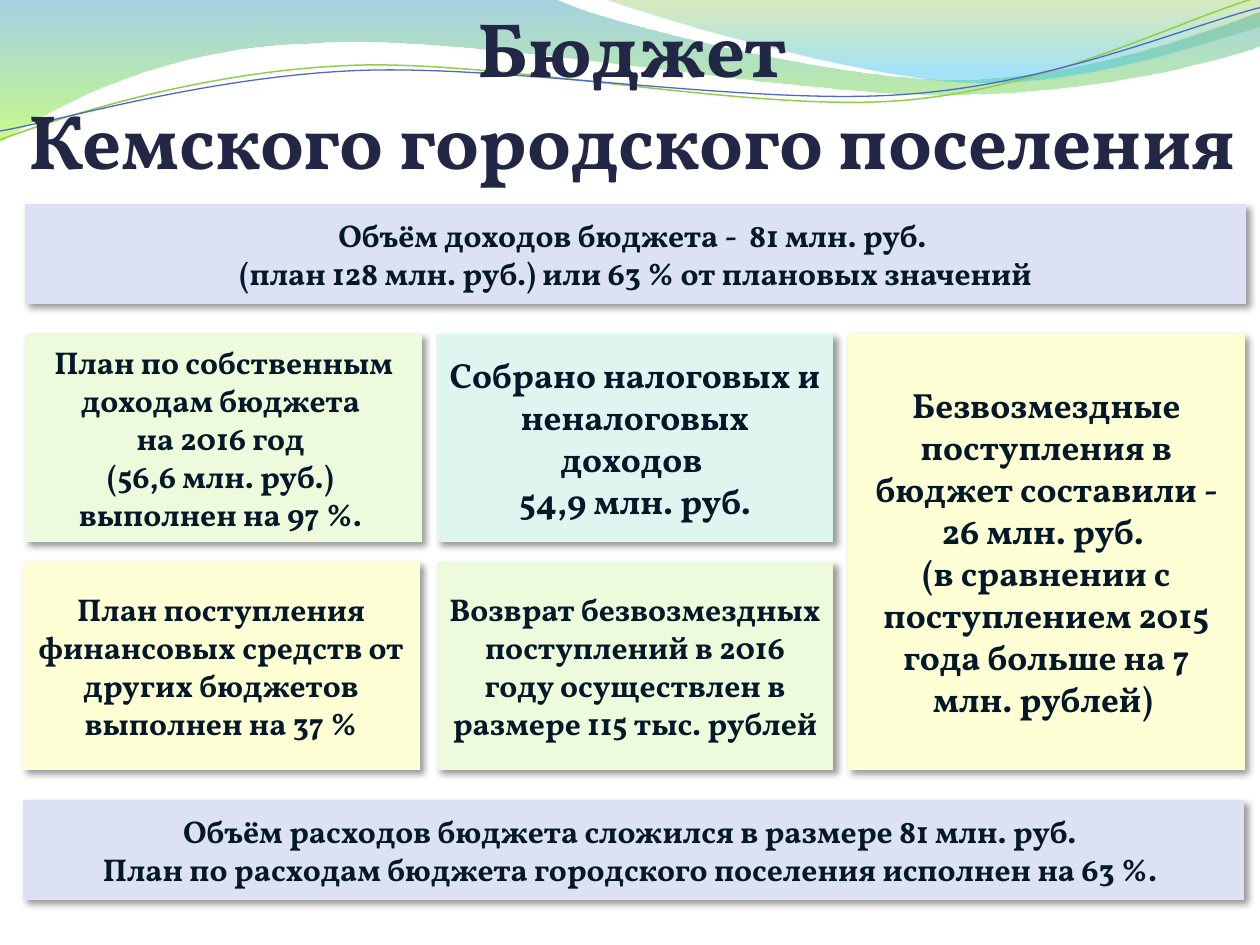
from dataclasses import dataclass
from math import cos, radians, sin

from pptx import Presentation
from pptx.dml.color import RGBColor
from pptx.enum.shapes import MSO_SHAPE
from pptx.enum.text import MSO_ANCHOR, PP_ALIGN
from pptx.oxml.ns import qn
from pptx.oxml.xmlchemy import OxmlElement
from pptx.util import Inches, Pt

PROCESS = MSO_SHAPE.FLOWCHART_PROCESS
MIDDLE, BOTTOM = MSO_ANCHOR.MIDDLE, MSO_ANCHOR.BOTTOM
CENTER = PP_ALIGN.CENTER
FONT = "Vollkorn"
COLORS = {
    "title": "212745", "text": "031828", "shadow": "000000",
    "lavender": "DCE1F4", "green": "EDFBDC", "mint": "DFF5EF", "yellow": "FEFFD5",
    "teal": "3B9CBF", "lime": "9CFA24", "leaf": "7EBE2C", "sky": "39C1F1",
    "green line": "93CE48", "blue line": "4E67C8",
}
LINE_TILT = -2.7
LEFT, LOWER_LEFT = 0.2, 0.18
COLUMN_WIDTH, COLUMN_STEP = 3.15, 3.265
ROW_TOP, ROW_HEIGHT, ROW_STEP = 2.65, 1.65, 1.81
BANNER_WIDTH, BANNER_HEIGHT = 9.69, 0.79
SECOND, THIRD = LEFT + COLUMN_STEP, LEFT + 2 * COLUMN_STEP
SECOND_ROW = ROW_TOP + ROW_STEP


@dataclass
class Stop:
    position: float
    color: str
    opacity: int


@dataclass
class Wave:
    box: tuple
    segments: list
    stops: tuple = ()
    line_color: str = ""
    line_width: float = 0
    tilt: float = 0


@dataclass
class Card:
    left: float
    top: float
    width: float
    height: float
    color: str
    size: int
    lines: list


WAVES = [
    Wave((-0.01, -0.01, 10.02, 1.14), [
        [(0, 0)],
        [(4.4, -0.01)],
        [(4.76, 0.17), (6.64, 0.63), (7.58, 0.63)],
        [(8.53, 0.63), (9.58, 0.26), (10, 0.09)],
        [(10.01, 0.36)],
        [(9.83, 0.44), (8.7, 0.76), (7.46, 0.75)],
        [(6.22, 0.75), (3.82, 0.28), (2.57, 0.34)],
        [(1.29, 0.36), (0.46, 0.83), (-0.01, 1.13)],
        [(0, 0)],
    ], stops=(Stop(0, "teal", 45), Stop(1, "lime", 55))),
    Wave((4.79, -0.01, 5.21, 0.7), [
        [(4.79, -0.01)],
        [(5.09, 0.11), (6.82, 0.62), (7.69, 0.65)],
        [(8.56, 0.69), (9.61, 0.32), (10, 0.21)],
        [(10, 0)],
        [(4.79, -0.01)],
    ], stops=(Stop(0, "leaf", 30), Stop(0.8, "sky", 45))),
    Wave((-0.02, 0.22, 10.02, 0.71), [
        [(0, 1.11)],
        [(0.48, 0.93), (1.58, 0.57), (2.77, 0.52)],
        [(3.95, 0.47), (5.93, 0.89), (7.13, 0.8)],
        [(8.33, 0.71), (9.38, 0.15), (9.98, -0.02)],
    ], line_color="green line", line_width=0.85, tilt=LINE_TILT),
    Wave((-0.02, 0.3, 10.03, 0.58), [
        [(0, 1.04)],
        [(0.47, 0.96), (1.64, 0.61), (2.83, 0.56)],
        [(4.03, 0.51), (5.97, 0.84), (7.17, 0.75)],
        [(8.36, 0.67), (9.41, 0.21), (10, 0.06)],
    ], line_color="blue line", line_width=0.75, tilt=LINE_TILT),
]

CARDS = [
    Card(LEFT, 1.62, BANNER_WIDTH, BANNER_HEIGHT, "lavender", 18, [
        "Объём доходов бюджета -  81 млн. руб. ",
        "(план 128 млн. руб.) или 63 % от плановых значений"]),
    Card(LEFT, ROW_TOP, COLUMN_WIDTH, ROW_HEIGHT, "green", 18, [
        "План по собственным доходам бюджета ", "на 2016 год ",
        "(56,6 млн. руб.) ", "выполнен на 97 %. "]),
    Card(SECOND, ROW_TOP, COLUMN_WIDTH, ROW_HEIGHT, "mint", 20, [
        "Собрано налоговых и неналоговых доходов ", "54,9 млн. руб."]),
    Card(THIRD, ROW_TOP, COLUMN_WIDTH, ROW_STEP + ROW_HEIGHT, "yellow", 20, [
        "Безвозмездные поступления в бюджет составили - 26 млн. руб. ",
        "(в сравнении с поступлением 2015 года больше на 7 млн. рублей) "]),
    Card(LOWER_LEFT, SECOND_ROW, COLUMN_WIDTH, ROW_HEIGHT, "yellow", 18, [
        "План поступления финансовых средств от других бюджетов выполнен на 37 %"]),
    Card(SECOND, SECOND_ROW, COLUMN_WIDTH, ROW_HEIGHT, "green", 18, [
        "Возврат безвозмездных поступлений в 2016 году осуществлен в размере 115 тыс. рублей"]),
    Card(LOWER_LEFT, 6.35, BANNER_WIDTH, BANNER_HEIGHT, "lavender", 18, [
        "Объём расходов бюджета сложился в размере 81 млн. руб. ",
        "План по расходам бюджета городского поселения исполнен на 63 %. "]),
]


def rgb(name: str) -> RGBColor:
    return RGBColor.from_string(COLORS[name])


def add_opacity(color_element, percent: int) -> None:
    alpha = OxmlElement("a:alpha")
    alpha.set("val", str(percent * 1000))
    color_element.append(alpha)


def to_local(point: tuple, wave: Wave) -> tuple:
    left, top, width, height = wave.box
    x, y = point[0] - left - width / 2, point[1] - top - height / 2
    angle = radians(-wave.tilt)
    return (Inches(x * cos(angle) - y * sin(angle) + width / 2),
            Inches(x * sin(angle) + y * cos(angle) + height / 2))


def draw_curves(shape, wave: Wave) -> None:
    outline = next(shape._element.spPr.iter(qn("a:path")))
    for command in list(outline):
        outline.remove(command)
    for index, points in enumerate(wave.segments):
        straight = "a:lnTo" if index else "a:moveTo"
        command = OxmlElement("a:cubicBezTo" if len(points) == 3 else straight)
        for point in points:
            x, y = to_local(point, wave)
            vertex = OxmlElement("a:pt")
            vertex.set("x", str(x))
            vertex.set("y", str(y))
            command.append(vertex)
        outline.append(command)
    if wave.stops:
        outline.append(OxmlElement("a:close"))


def add_wave(slide, wave: Wave) -> None:
    left, top, width, height = (Inches(value) for value in wave.box)
    builder = slide.shapes.build_freeform(left, top)
    builder.add_line_segments([(left + width, top + height)], close=False)
    shape = builder.convert_to_shape()
    draw_curves(shape, wave)
    shape.rotation = wave.tilt
    shape.shadow.inherit = False
    if not wave.stops:
        shape.fill.background()
        shape.line.color.rgb = rgb(wave.line_color)
        shape.line.width = Pt(wave.line_width)
        return
    shape.line.fill.background()
    shape.fill.gradient()
    shape.fill.gradient_angle = 270
    for gradient_stop, stop in zip(shape.fill.gradient_stops, wave.stops):
        gradient_stop.position = stop.position
        gradient_stop.color.rgb = rgb(stop.color)
    colors = shape._element.spPr.iter(qn("a:srgbClr"))
    for color_element, stop in zip(list(colors), wave.stops):
        add_opacity(color_element, stop.opacity)


def add_shadow(shape) -> None:
    shape.shadow.inherit = False
    shadow = OxmlElement("a:outerShdw")
    for key, value in (("blurRad", Pt(4)), ("dist", Pt(3)), ("dir", 45 * 60000),
                       ("algn", "tl"), ("rotWithShape", 0)):
        shadow.set(key, str(value))
    color_element = OxmlElement("a:srgbClr")
    color_element.set("val", COLORS["shadow"])
    add_opacity(color_element, 40)
    shadow.append(color_element)
    shape._element.spPr.find(qn("a:effectLst")).append(shadow)


def add_text(paragraph, text: str, size: int, color: str) -> None:
    paragraph.alignment = CENTER
    run = paragraph.add_run()
    run.text = text
    run.font.name, run.font.size, run.font.bold = FONT, Pt(size), True
    run.font.color.rgb = rgb(color)


def add_title(slide, lines: list) -> None:
    box = slide.shapes.add_textbox(Inches(0.14), Inches(0.21), Inches(9.76), Inches(1.26))
    frame = box.text_frame
    frame.word_wrap, frame.vertical_anchor = True, BOTTOM
    frame.margin_left = frame.margin_right = frame.margin_bottom = 0
    paragraph = frame.paragraphs[0]
    for index, line in enumerate(lines):
        if index:
            paragraph.add_line_break()
        add_text(paragraph, line, 44, "title")


def add_card(slide, card: Card) -> None:
    box = (Inches(value) for value in (card.left, card.top, card.width, card.height))
    shape = slide.shapes.add_shape(PROCESS, *box)
    shape.fill.solid()
    shape.fill.fore_color.rgb = rgb(card.color)
    shape.line.fill.background()
    add_shadow(shape)
    frame = shape.text_frame
    frame.word_wrap, frame.vertical_anchor = True, MIDDLE
    for index, line in enumerate(card.lines):
        paragraph = frame.add_paragraph() if index else frame.paragraphs[0]
        add_text(paragraph, line, card.size, "text")


presentation = Presentation()
presentation.slide_width, presentation.slide_height = Inches(10), Inches(7.5)
budget_slide = presentation.slides.add_slide(presentation.slide_layouts[6])
for wave_item in WAVES:
    add_wave(budget_slide, wave_item)
add_title(budget_slide, ["Бюджет", "Кемского городского поселения"])
for card_item in CARDS:
    add_card(budget_slide, card_item)
presentation.save("out.pptx")
